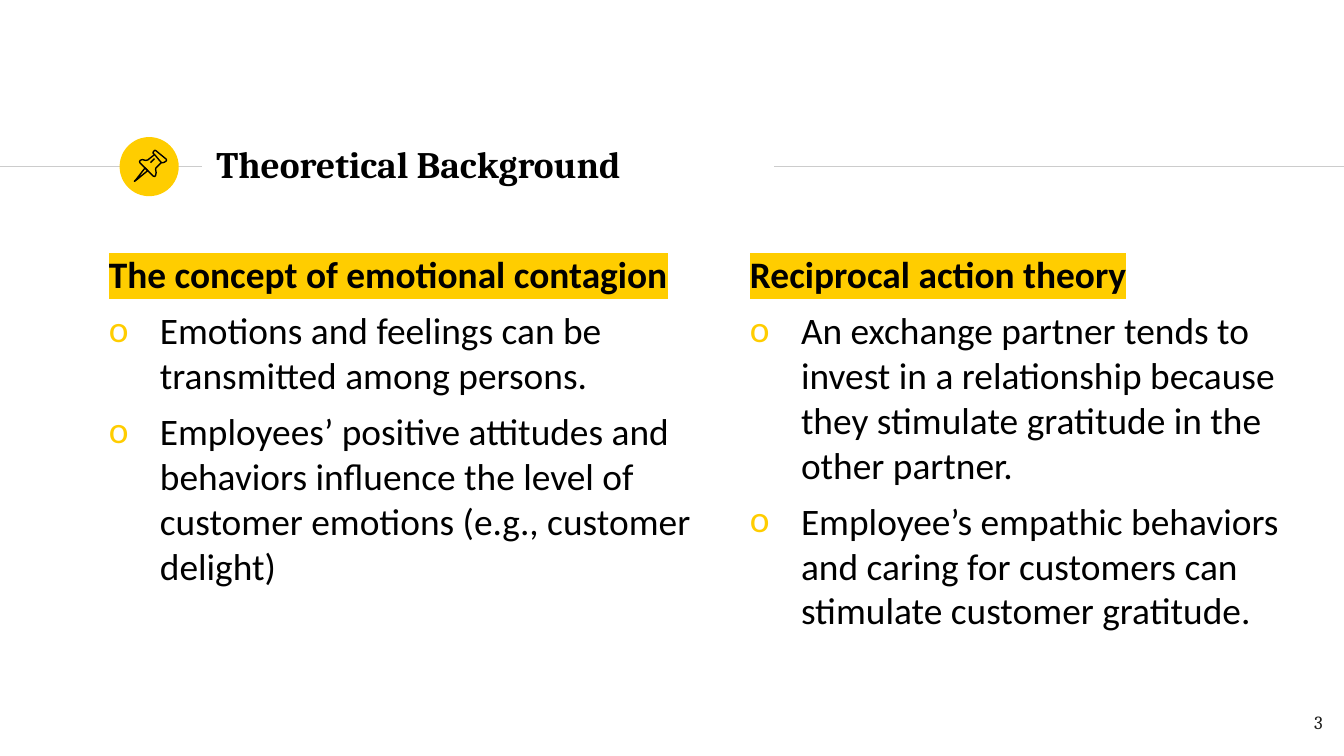
from dataclasses import dataclass

from lxml import etree
from pptx import Presentation
from pptx import util as u
from pptx.dml.color import RGBColor
from pptx.enum import shapes, text
from pptx.oxml.ns import qn


@dataclass(frozen=True)
class Theme:
    accent: str = "FFCD00"
    rule: str = "CCCCCC"
    ink: str = "000000"
    number_ink: str = "1D1D1B"
    heading_font: str = "Cambria"
    body_font: str = "Calibri"
    main_size: int = 20
    number_size: int = 10
    line_width: float = 0.75


THEME = Theme()
PAGE_WIDTH = 10

COLUMNS = [
    ((0.71, 1.77, 4.54, 3.53), "The concept of emotional contagion", [
        "Emotions and feelings can be transmitted among persons.",
        "Employees’ positive attitudes and behaviors influence the level of "
        "customer emotions (e.g., customer delight)",
    ]),
    ((5.48, 1.77, 4.24, 3.53), "Reciprocal action theory", [
        "An exchange partner tends to invest in a relationship because they "
        "stimulate gratitude in the other partner.",
        "Employee’s empathic behaviors and caring for customers can stimulate "
        "customer gratitude.",
    ]),
]

# Pushpin outlines in thousandths of an inch from the badge corner: points, closed
PIN = [
    ([(190, 230), (120, 320), (110, 330), (125, 320), (210, 250)], True),  # needle
    ([(260, 130), (310, 190), (320, 192), (335, 187), (345, 180), (350, 172),
      (346, 164), (272, 103), (264, 99), (256, 104), (250, 112), (250, 122)], True),  # head
    ([(260, 130), (210, 170), (195, 174), (170, 168), (155, 172), (148, 182),
      (150, 190), (250, 290), (260, 294), (268, 285), (272, 265), (268, 240),
      (270, 230), (310, 190)], False),  # body
    ([(230, 190), (260, 160)], False),  # shine
]


def color(value):
    return RGBColor.from_string(value)


def place(shape, box):
    shape.left, shape.top, shape.width, shape.height = map(u.Inches, box)


def prepare_frame(shape, anchor):
    frame = shape.text_frame
    frame.word_wrap = True
    frame.auto_size = text.MSO_AUTO_SIZE.NONE
    frame.vertical_anchor = anchor
    frame.margin_left = frame.margin_right = u.Inches(0.1)
    frame.margin_top = frame.margin_bottom = u.Inches(0.1)
    return frame


def add_span(para, words, font, size=THEME.main_size, ink=THEME.ink, bold=False):
    span = para.add_run()
    span.text = words
    span.font.size = u.Pt(size)
    span.font.bold = bold
    span.font.color.rgb = color(ink)
    span.font.name = font
    return span


def add_rule(page, start, end, height):
    rule = page.shapes.add_connector(
        shapes.MSO_CONNECTOR.STRAIGHT,
        u.Inches(start), u.Inches(height), u.Inches(end), u.Inches(height))
    rule.line.color.rgb = color(THEME.rule)
    rule.line.width = u.Pt(THEME.line_width)
    etree.SubElement(rule._element.spPr, qn("a:effectLst"))


def add_badge(page, box):
    left, top = box[:2]
    circle = page.shapes.add_shape(shapes.MSO_SHAPE.OVAL, *map(u.Inches, box))
    circle.shadow.inherit = False
    circle.fill.solid()
    circle.fill.fore_color.rgb = color(THEME.accent)
    circle.line.fill.background()

    # Pushpin icon
    pin = page.shapes.add_group_shape()
    for points, closed in PIN:
        builder = pin.shapes.build_freeform(*points[0], scale=u.Inches(1) / 1000)
        builder.add_line_segments(points[1:], close=closed)
        outline = builder.convert_to_shape(u.Inches(left), u.Inches(top))
        outline.shadow.inherit = False
        outline.fill.background()
        outline.line.color.rgb = color(THEME.ink)
        outline.line.width = u.Pt(THEME.line_width)


def add_header(page, box):
    left, top, width, height = box
    middle = top + 0.26
    add_rule(page, 0, left - 0.01, middle)
    add_rule(page, left + width + 0.01, PAGE_WIDTH, middle)
    add_badge(page, (left - 0.62, middle - 0.22, 0.44, 0.44))

    title = page.shapes.title
    place(title, box)
    para = prepare_frame(title, text.MSO_ANCHOR.MIDDLE).paragraphs[0]
    para.alignment = text.PP_ALIGN.LEFT
    add_span(para, "Theoretical Background", THEME.heading_font, bold=True)


def set_bullet(para, shown):
    properties = para._p.get_or_add_pPr()
    indent = u.Inches(0.38) if shown else 0
    properties.set("marL", str(indent))
    properties.set("indent", str(-indent))
    if shown:
        tint = etree.SubElement(properties, qn("a:buClr"))
        etree.SubElement(tint, qn("a:srgbClr"), val=THEME.accent)
        etree.SubElement(properties, qn("a:buFont"), typeface=THEME.body_font)
        etree.SubElement(properties, qn("a:buChar"), char="o")
    else:
        etree.SubElement(properties, qn("a:buNone"))


def highlight(span):
    mark = etree.Element(qn("a:highlight"))
    etree.SubElement(mark, qn("a:srgbClr"), val=THEME.accent)
    span._r.rPr.find(qn("a:solidFill")).addnext(mark)


def fill_column(holder, box, heading, points):
    place(holder, box)
    frame = prepare_frame(holder, text.MSO_ANCHOR.TOP)
    for index, words in enumerate([heading, *points]):
        is_heading = index == 0
        para = frame.paragraphs[0] if is_heading else frame.add_paragraph()
        para.alignment = text.PP_ALIGN.LEFT
        para.space_before = u.Pt(6)
        set_bullet(para, shown=not is_heading)
        span = add_span(para, words, THEME.body_font, bold=is_heading)
        if is_heading:
            highlight(span)


def add_page_number(page, box):
    holder = page.shapes.add_textbox(*map(u.Inches, box))
    para = prepare_frame(holder, text.MSO_ANCHOR.TOP).paragraphs[0]
    para.alignment = text.PP_ALIGN.RIGHT
    add_span(para, "3", THEME.heading_font, THEME.number_size, THEME.number_ink)


def main():
    deck = Presentation()
    # Widescreen page, 16:9
    deck.slide_width = u.Inches(PAGE_WIDTH)
    deck.slide_height = u.Inches(PAGE_WIDTH * 9 / 16)
    page = deck.slides.add_slide(deck.slide_layouts.get_by_name("Two Content"))
    add_header(page, (1.51, 0.98, 4.24, 0.48))
    for position, column in enumerate(COLUMNS, start=1):
        fill_column(page.placeholders[position], *column)
    add_page_number(page, (9.34, 5.19, 0.6, 0.43))
    deck.save("out.pptx")


if __name__ == "__main__":
    main()
